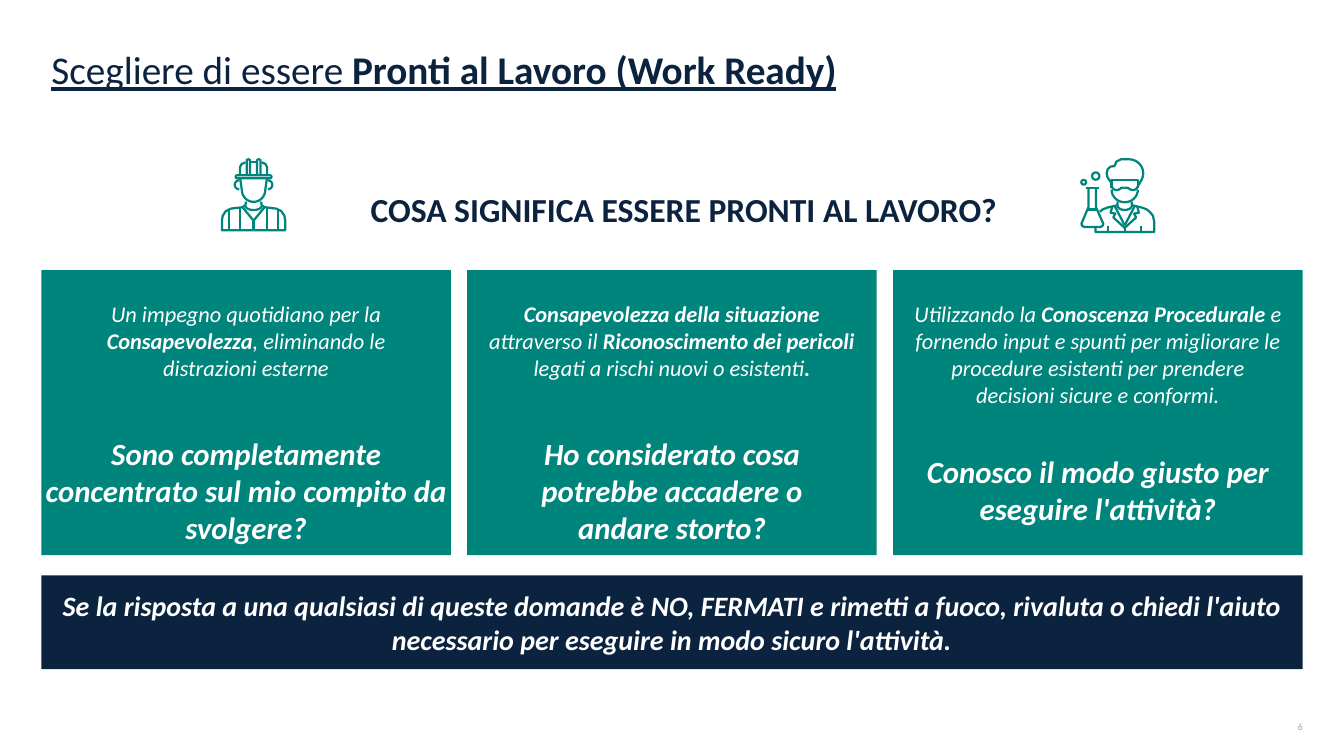
import math

import pptx
import pptx.dml.color
import pptx.enum.shapes
import pptx.enum.text
import pptx.util

Pt = pptx.util.Pt
ALIGN = pptx.enum.text.PP_ALIGN
ANCHOR = pptx.enum.text.MSO_ANCHOR
NAVY, TEAL, WHITE, GREY = "0C2340", "00857C", "FFFFFF", "9EA7B3"

COLUMNS = [
    ("Un impegno quotidiano per la *Consapevolezza*, eliminando le distrazioni esterne",
     "Sono completamente concentrato sul mio compito da svolgere?", 0),
    ("*Consapevolezza della situazione *attraverso il *Riconoscimento dei pericoli *"
     "legati a rischi nuovi o esistenti*.*",
     "Ho considerato cosa potrebbe accadere o andare storto?", 20.5),
    ("Utilizzando la *Conoscenza Procedurale *e fornendo input e spunti per migliorare "
     "le procedure esistenti per prendere decisioni sicure e conformi.",
     "Conosco il modo giusto per eseguire l'attività?", 20.5),
]


def rgb(value):
    return pptx.dml.color.RGBColor.from_string(value)


def write(shape, text, size, color, align=ALIGN.CENTER, anchor=ANCHOR.MIDDLE,
          insets=(0, 0, 0, 0), italic=False, underline=False):
    frame = shape.text_frame
    frame.word_wrap = True
    frame.vertical_anchor = anchor
    frame.margin_left, frame.margin_top, frame.margin_right, frame.margin_bottom = map(Pt, insets)
    paragraph = frame.paragraphs[0]
    paragraph.alignment = align
    font = paragraph.font
    font.name, font.size, font.italic, font.underline = "Calibri", Pt(size), italic, underline
    font.color.rgb = rgb(color)
    for position, part in enumerate(text.split("*")):
        if part:
            run = paragraph.add_run()
            run.text = part
            run.font.bold = position % 2 == 1
    return paragraph


def add_label(slide, box, text, size, color, **style):
    return write(slide.shapes.add_textbox(*map(Pt, box)), text, size, color, **style)


def add_panel(slide, box, fill, text, size, **style):
    panel = slide.shapes.add_shape(pptx.enum.shapes.MSO_SHAPE.RECTANGLE, *map(Pt, box))
    panel.shadow.inherit = False
    panel.fill.solid()
    panel.fill.fore_color.rgb = rgb(fill)
    panel.line.fill.background()
    write(panel, text, size, WHITE, italic=True, **style)


def arc(x, y, rx, ry, start=0, end=360):
    steps = 16
    angles = [math.radians(start + (end - start) * step / steps) for step in range(steps + 1)]
    return [(x + rx * math.cos(a), y + ry * math.sin(a)) for a in angles]


def mirrored(strokes, axis):
    return strokes + [[(2 * axis - x, y) for x, y in stroke] for stroke in strokes]


def add_icon(slide, left, top, strokes):
    builder = None
    for stroke in strokes:
        points = [(Pt(x), Pt(y)) for x, y in stroke]
        if builder is None:
            builder = slide.shapes.build_freeform(*points[0], scale=1.0)
        else:
            builder.move_to(*points[0])
        builder.add_line_segments(points[1:], close=False)
    icon = builder.convert_to_shape(Pt(left), Pt(top))
    icon.shadow.inherit = False
    icon.fill.background()
    icon.line.color.rgb = rgb(TEAL)
    icon.line.width = Pt(1.6)


def add_worker(slide, left, top):
    axis = 23.4
    half = [
        [(13.7, 12.2), (13.7, 6.5), (14.8, 4.2), (17.6, 2.9)],
        [(18.5, 12.2), (18.5, 1.8)] + arc(19.7, 1.8, 1.2, 1, 180, 360) + [(20.9, 12.2)],
        arc(13.2, 19, 3.2, 3.2, 270, 90),
        [(18, 31), (17.6, 33.6), (15.5, 35), (7.2, 36), (3.6, 37.8), (1.4, 41),
         (0.8, 44.6), (0.8, 51.5), (axis, 51.5)],
        [(5.8, 36.5), (5.8, 51.5)],
        [(13.7, 35.3), (13.7, 51.5)],
        [(15.5, 35), (axis, 44.6)],
    ]
    centre = [
        [(11.8, 12.2), (35, 12.2)] + arc(35, 13.3, 1.2, 1.1, 270, 450)
        + [(11.8, 14.4)] + arc(11.8, 13.3, 1.2, 1.1, 90, 270),
        [(20.9, 2.9), (25.9, 2.9)],
        [(32.9, 14.8)] + arc(axis, 22.5, 8.4, 8.7, 0, 180) + [(13.9, 14.8)],
        arc(axis, 34, 5.8, 3, 0, 180),
        [(axis, 44.6), (axis, 51.5)],
    ]
    add_icon(slide, left, top, mirrored(half, axis) + centre)


def add_scientist(slide, left, top):
    axis = 31.7
    half = [
        [(26.6, 31), (26.6, 33.6), (19.4, 35.3), (16, 36.6), (13.9, 38.3)],
        [(22.7, 34.8), (21.6, 39), (25, 39.6), (23.6, 42.4), (axis, 49.8)],
        [(24.6, 34.3), (axis, 48)],
        [(19.8, 48.2), (19.8, 52.8)],
        [(22.3, 21), (22.3, 15.4), (axis, 15.4)],
        [(22.3, 20), (23.4, 22), (25.2, 22.8), (27.3, 22.6), (29.5, 21.2), (axis, 21.2)],
    ]
    single = [
        [(10.8, 49), (10.8, 52.8), (52.8, 52.8), (52.8, 45.4), (51.8, 41), (49.5, 38.3)],
        [(axis, 49.8), (axis, 52.8)],
        arc(axis, 22.5, 9.4, 9, 0, 180),
        arc(axis, 34, 5, 3, 0, 180),
        [(21.6, 17), (19.4, 13.6), (18.8, 10.8), (19.6, 7.8), (21.5, 6.1), (24.4, 5.6),
         (25.8, 2.4), (29, 0.8)] + arc(34.7, 10.8, 10.2, 10, 270, 390) + [(41.4, 19.6)],
        [(4, 21.6), (13.2, 21.6)],
        [(5.8, 21.6), (5.8, 35), (0.8, 46.8), (1.3, 48.4), (2.9, 49.2), (14.2, 49.2),
         (15.9, 48.4), (16.4, 46.8), (11.2, 35), (11.2, 21.6)],
        [(5.2, 36.7), (11.8, 36.7)],
        arc(2.4, 17.2, 1.7, 1.7),
        arc(11, 12.8, 2.6, 2.6),
    ]
    add_icon(slide, left, top, mirrored(half, axis) + single)


def add_header(slide, left, top):
    title = add_label(slide, (left, top, 673, 67),
                      "Scegliere di essere *Pronti al Lavoro (Work Ready)*", 28, NAVY,
                      align=ALIGN.LEFT, underline=True)
    title.line_spacing = 0.9


def add_question_band(slide, left, top):
    add_worker(slide, left, top)
    add_label(slide, (left + 60.5, top + 20, 540.5, 32),
              "*COSA SIGNIFICA ESSERE PRONTI AL LAVORO?*", 24, NAVY)
    add_scientist(slide, left + 614, top)


def add_columns(slide, left, top, width, height):
    gap = 11.7
    column_width = (width - gap * (len(COLUMNS) - 1)) / len(COLUMNS)
    for index, (statement, question, inset) in enumerate(COLUMNS):
        column_left = left + index * (column_width + gap)
        add_panel(slide, (column_left, top, column_width, height), TEAL, statement, 16,
                  anchor=ANCHOR.TOP, insets=(14.4, 21.6, 14.4, 7.2))
        add_label(slide, (column_left + inset, top + 114.5, column_width - 2 * inset, 85),
                  f"*{question}*", 22, WHITE, italic=True)


def add_footer(slide, left, top, width):
    add_panel(slide, (left, top, width, 67), NAVY,
              "*Se la risposta a una qualsiasi di queste domande è NO, FERMATI e rimetti a fuoco, "
              "rivaluta o chiedi l'aiuto necessario per eseguire in modo sicuro l'attività.*",
              20, insets=(14.4, 7.2, 14.4, 7.2))
    add_label(slide, (left + width - 18, top + 99.5, 18, 17), "6", 7, GREY, align=ALIGN.RIGHT)


def main():
    deck = pptx.Presentation()
    deck.slide_width, deck.slide_height = Pt(960), Pt(540)
    slide = deck.slides.add_slide(deck.slide_layouts[6])
    add_header(slide, 36.7, 18)
    add_question_band(slide, 157.7, 113)
    add_columns(slide, 29.5, 193, 901, 203.5)
    add_footer(slide, 29.5, 411, 901)
    deck.save("out.pptx")


if __name__ == "__main__":
    main()
